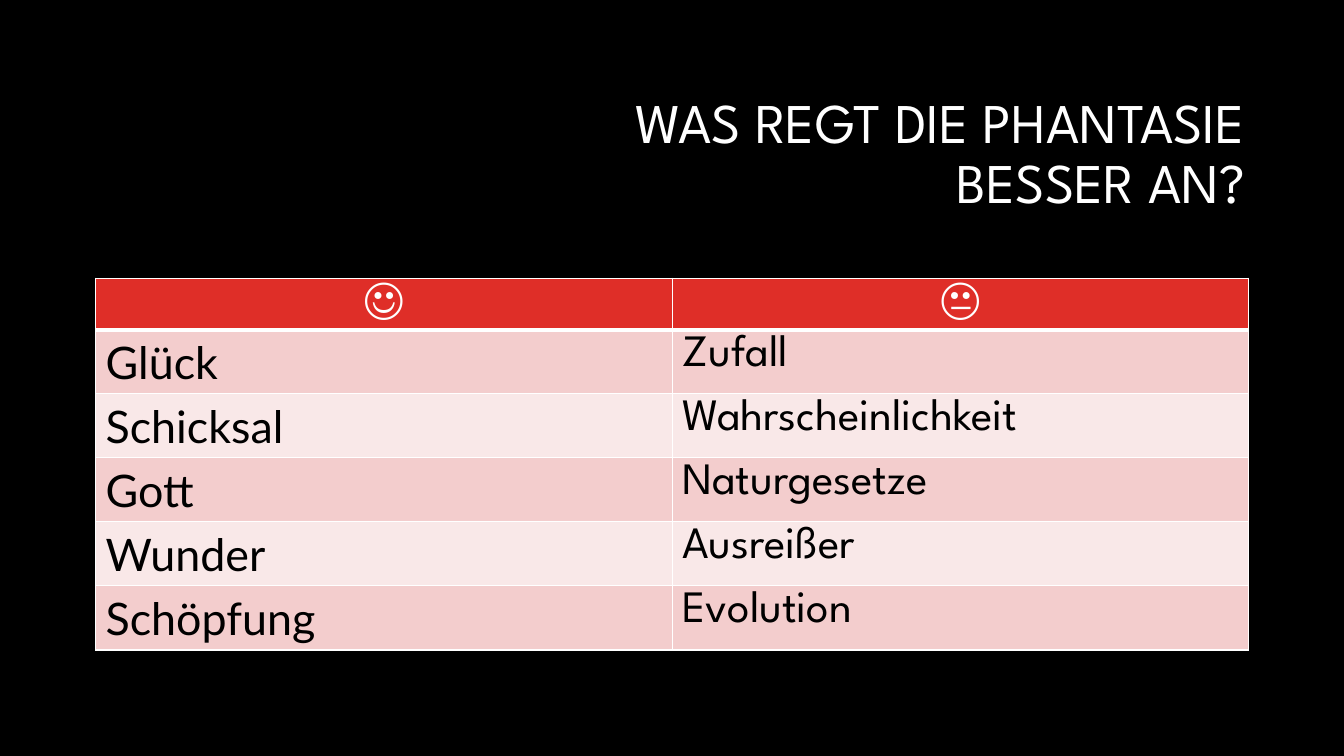
from lxml.etree import SubElement
from pptx import Presentation
from pptx.dml.color import RGBColor
from pptx.enum.text import MSO_ANCHOR as Anchor, PP_ALIGN as Align
from pptx.oxml.ns import qn
from pptx.util import Cm, Pt

COLORS = {
    "background": "000000",
    "light": "FFFFFF",
    "dark": "000000",
    "header": "DF2E28",
    "odd": "F3CDCD",
    "even": "F9E8E8",
}
HEADING_FONT = "League Spartan"
COLUMN_FONTS = ("Lato", HEADING_FONT)
TITLE = "WAS REGT DIE PHANTASIE \vBESSER AN? "
ROWS = (
    ("☺", "😐"),
    ("Glück", "Zufall"),
    ("Schicksal", "Wahrscheinlichkeit"),
    ("Gott", "Naturgesetze"),
    ("Wunder", "Ausreißer"),
    ("Schöpfung", "Evolution"),
)


def color(name):
    """Return the named colour."""
    return RGBColor.from_string(COLORS[name])


def format_para(para, align, font, size, shade, bold=False):
    """Align a paragraph and format all its runs."""
    para.alignment = align
    for span in para.runs:
        span.font.name = font
        span.font.size = Pt(size)
        span.font.bold = bold
        span.font.color.rgb = color(shade)


def add_borders(cell, top, bottom):
    """Draw white borders around a cell, top and bottom widths in points."""
    properties = cell._tc.get_or_add_tcPr()
    for side, width in (("lnL", 1), ("lnR", 1), ("lnT", top), ("lnB", bottom)):
        line = SubElement(properties, qn(f"a:{side}"), w=str(Pt(width)))
        fill = SubElement(line, qn("a:solidFill"))
        SubElement(fill, qn("a:srgbClr"), val=COLORS["light"])


def place_title(page, left, top, width, height):
    """Move the title placeholder into the box and fill it."""
    box = page.shapes.title
    box.left, box.top, box.width, box.height = left, top, width, height
    frame = box.text_frame
    frame.word_wrap = True
    frame.vertical_anchor = Anchor.MIDDLE
    frame.text = TITLE
    para = frame.paragraphs[0]
    para.line_spacing = 0.9
    format_para(para, Align.RIGHT, HEADING_FONT, 40, "light")


def place_table(page, left, top, width, row_height):
    """Build the comparison table with a red header and pink bands."""
    table = page.shapes.add_table(
        len(ROWS), len(ROWS[0]), left, top, width, row_height * len(ROWS)
    ).table
    for row, texts in enumerate(ROWS):
        header = row == 0
        band = "header" if header else ("odd" if row % 2 else "even")
        for column, text in enumerate(texts):
            cell = table.cell(row, column)
            add_borders(cell, 3 if row == 1 else 1, 3 if header else 1)
            cell.fill.solid()
            cell.fill.fore_color.rgb = color(band)
            cell.text_frame.text = text
            format_para(
                cell.text_frame.paragraphs[0],
                Align.CENTER if header else Align.LEFT,
                HEADING_FONT if header else COLUMN_FONTS[column],
                32,
                "light" if header else "dark",
                header,
            )


def main():
    """Build the one-slide deck and save it."""
    deck = Presentation()
    deck.slide_width, deck.slide_height = Cm(33.87), Cm(19.05)
    page = deck.slides.add_slide(deck.slide_layouts[5])
    page.background.fill.solid()
    page.background.fill.fore_color.rgb = color("background")
    place_title(page, Cm(8.05), Cm(2.13), Cm(23.93), Cm(3.58))
    place_table(page, Cm(2.41), Cm(7.01), Cm(29.06), Cm(1.04))
    deck.save("out.pptx")


if __name__ == "__main__":
    main()
